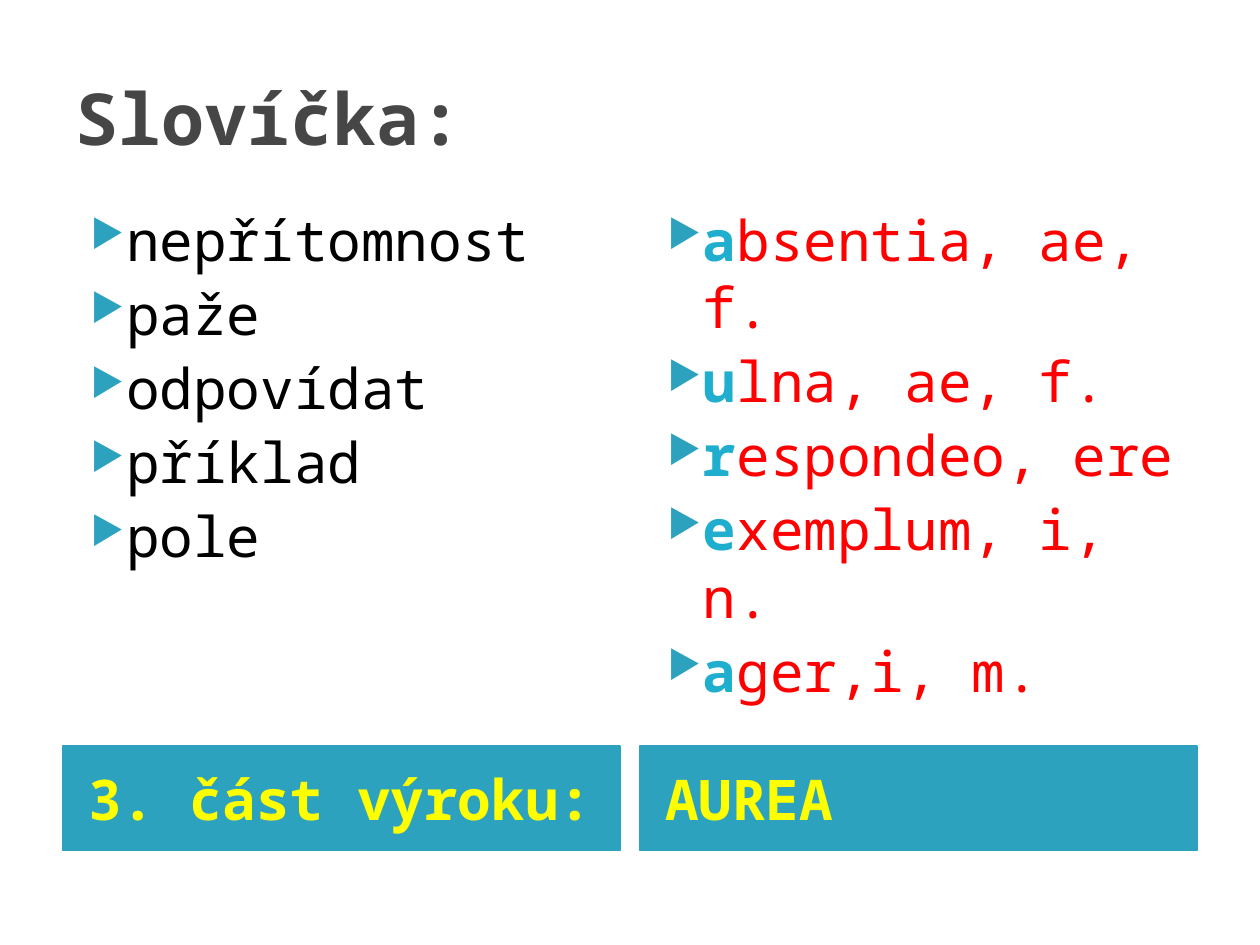
from lxml import etree
from pptx import Presentation
from pptx.dml.color import RGBColor
from pptx.enum.shapes import MSO_SHAPE
from pptx.enum.text import MSO_ANCHOR, MSO_AUTO_SIZE, PP_ALIGN
from pptx.oxml.ns import qn
from pptx.util import Cm, Pt

RECT = MSO_SHAPE.RECTANGLE
MIDDLE = MSO_ANCHOR.MIDDLE
LEFT = PP_ALIGN.LEFT
NO_FIT = MSO_AUTO_SIZE.NONE

FONT = "Noto Sans Mono"
BULLET_FONT = "OpenSymbol"
TEAL = "2DA2BF"
INITIAL = "1FAECD"
BLACK = "000000"
RED = "FF0000"
YELLOW = "FFFF00"
GREY = "464646"

MARGIN = 1.27
COLUMN_W = 11.23
COLUMN_STEP = 11.63

COLUMNS = [
    ("3. část výroku:", BLACK, False,
     ["nepřítomnost", "paže", "odpovídat", "příklad", "pole"]),
    ("AUREA", RED, True,
     ["absentia, ae, f.", "ulna, ae, f.", "respondeo, ere",
      "exemplum, i, n.", "ager,i, m."]),
]


def rgb(value):
    return RGBColor.from_string(value)


def style(r, size, color, bold=False):
    r.font.name = FONT
    r.font.size = Pt(size)
    r.font.bold = bold
    r.font.color.rgb = rgb(color)


def add_bullet(p):
    pPr = p._p.get_or_add_pPr()
    pPr.set("marL", str(Cm(1.02)))
    pPr.set("indent", str(-Cm(0.71)))
    color = etree.SubElement(pPr, qn("a:buClr"))
    etree.SubElement(color, qn("a:srgbClr"), val=TEAL)
    etree.SubElement(pPr, qn("a:buSzPct"), val="68000")
    etree.SubElement(pPr, qn("a:buFont"), typeface=BULLET_FONT)
    etree.SubElement(pPr, qn("a:buChar"), char="▶")


def place_title(s, x, y, w, h):
    title = s.shapes.title
    title.left, title.top, title.width, title.height = Cm(x), Cm(y), Cm(w), Cm(h)
    tf = title.text_frame
    tf.text = "Slovíčka:"
    tf.auto_size = NO_FIT
    tf.vertical_anchor = MIDDLE
    p = tf.paragraphs[0]
    p.alignment = LEFT
    style(p.runs[0], 41, GREY, True)


def add_words(s, x, y, w, h, words, color, mark_initial):
    tf = s.shapes.add_textbox(Cm(x), Cm(y), Cm(w), Cm(h)).text_frame
    tf.word_wrap = True
    for i, word in enumerate(words):
        p = tf.paragraphs[0] if i == 0 else tf.add_paragraph()
        if i > 0:
            p.space_before = Pt(4)
        add_bullet(p)
        if mark_initial:
            r = p.add_run()
            r.text = word[0]
            style(r, 32, INITIAL, True)
            word = word[1:]
        r = p.add_run()
        r.text = word
        style(r, 32, color)


def add_caption(s, x, y, w, h, text):
    sp = s.shapes.add_shape(RECT, Cm(x), Cm(y), Cm(w), Cm(h))
    sp.shadow.inherit = False
    sp.fill.solid()
    sp.fill.fore_color.rgb = rgb(TEAL)
    sp.line.color.rgb = rgb(TEAL)
    sp.line.width = Pt(0.75)
    tf = sp.text_frame
    tf.text = text
    tf.word_wrap = True
    tf.vertical_anchor = MIDDLE
    tf.margin_left = Cm(0.51)
    p = tf.paragraphs[0]
    p.alignment = LEFT
    style(p.runs[0], 32, YELLOW, True)


def add_column(s, x, y, w, caption, color, mark_initial, words):
    add_words(s, x, y, w, 10.95, words, color, mark_initial)
    add_caption(s, x, y + 11.03, w, 2.11, caption)


def main():
    prs = Presentation()
    prs.slide_width, prs.slide_height = Cm(25.4), Cm(19.05)
    s = prs.slides.add_slide(prs.slide_layouts[5])
    place_title(s, MARGIN, 0.76, 22.86, 3.18)
    for i, column in enumerate(COLUMNS):
        add_column(s, MARGIN + i * COLUMN_STEP, 4.01, COLUMN_W, *column)
    prs.save("out.pptx")


if __name__ == "__main__":
    main()
